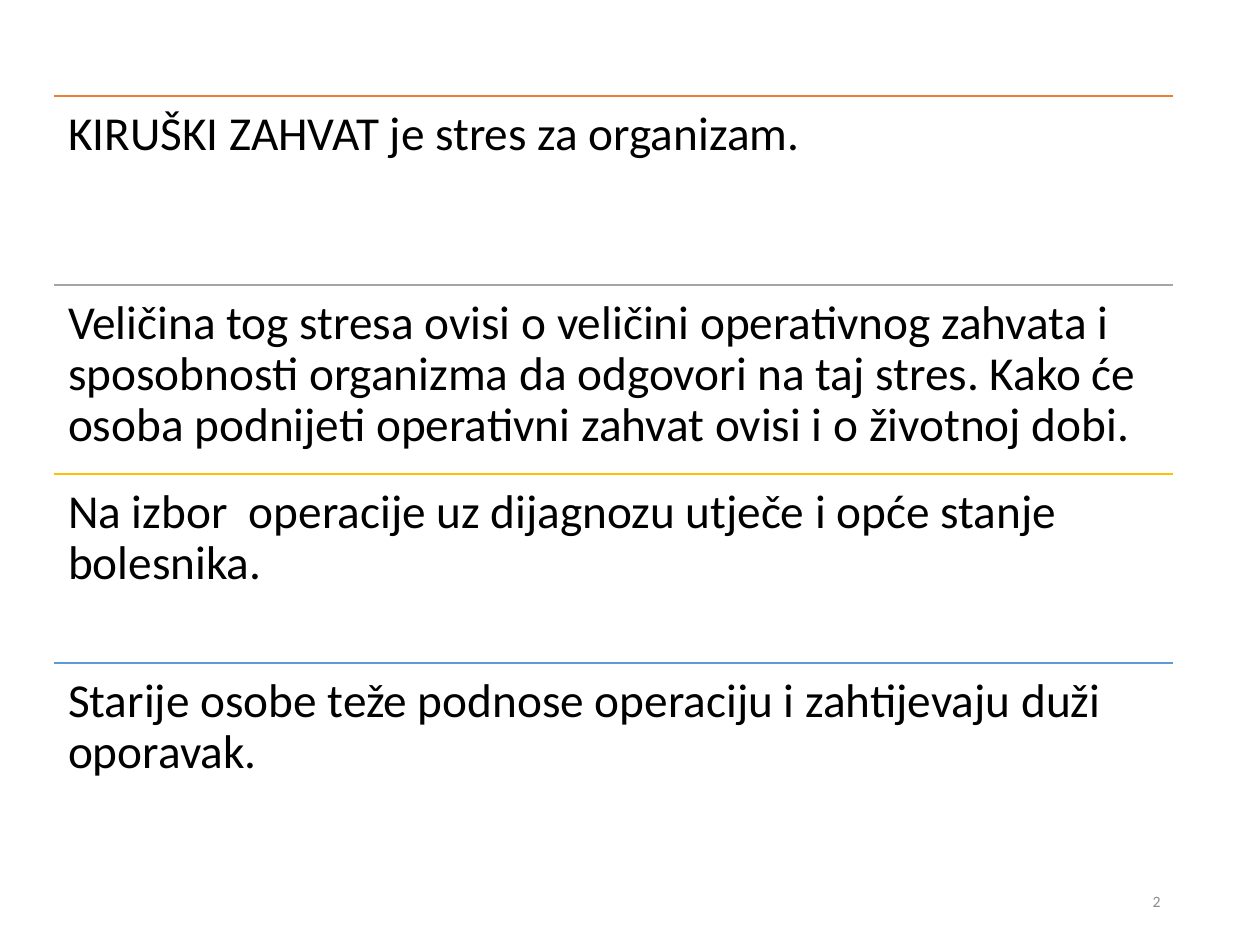
from lxml import etree
from pptx import Presentation
from pptx.dml.color import RGBColor
from pptx.enum.shapes import MSO_CONNECTOR
from pptx.enum.text import MSO_ANCHOR, PP_ALIGN
from pptx.oxml.ns import qn
from pptx.util import Inches, Pt

STRAIGHT = MSO_CONNECTOR.STRAIGHT
TOP, MIDDLE = MSO_ANCHOR.TOP, MSO_ANCHOR.MIDDLE
LEFT, RIGHT = PP_ALIGN.LEFT, PP_ALIGN.RIGHT


def color(value):
    return RGBColor.from_string(value)


def add_text(text, left, top, width, height, size, fill="000000", align=LEFT,
             anchor=TOP, inset=0.11, spacing=1.0, after=0):
    box = page.shapes.add_textbox(Inches(left), Inches(top), Inches(width), Inches(height))
    frame = box.text_frame
    frame.word_wrap = True
    frame.vertical_anchor = anchor
    frame.margin_left = frame.margin_right = Inches(inset)
    frame.margin_top = frame.margin_bottom = Inches(min(inset, height / 4))
    para = frame.paragraphs[0]
    para.alignment = align
    para.line_spacing = spacing
    para.space_after = Pt(after)
    span = para.add_run()
    span.text = text
    span.font.name = "Calibri"
    span.font.size = Pt(size)
    span.font.color.rgb = color(fill)


deck = Presentation()
deck.slide_width, deck.slide_height = Inches(10), Inches(7.5)
page = deck.slides.add_slide(deck.slide_layouts[6])

# Slide number
add_text("2", 7.06, 6.95, 2.25, 0.4, 9, fill="8C8C8C", align=RIGHT,
         anchor=MIDDLE, inset=0.1, after=6)

# Four equal rows, each a coloured rule with a statement under it
statements = [
    ("ED7D31", "KIRUŠKI ZAHVAT je stres za organizam."),
    ("A5A5A5", "Veličina tog stresa ovisi o veličini operativnog zahvata i "
               "sposobnosti organizma da odgovori na taj stres. Kako će osoba "
               "podnijeti operativni zahvat ovisi i o životnoj dobi."),
    ("FFC000", "Na izbor  operacije uz dijagnozu utječe i opće stanje bolesnika."),
    ("5B9BD5", "Starije osobe teže podnose operaciju i zahtijevaju duži oporavak."),
]
row_left, first_top, row_width, row_height = 0.43, 0.76, 8.88, 1.5

for index, (rule_color, statement) in enumerate(statements):
    top = first_top + index * row_height
    rule = page.shapes.add_connector(STRAIGHT, Inches(row_left), Inches(top),
                                     Inches(row_left + row_width), Inches(top))
    rule.line.color.rgb = color(rule_color)
    rule.line.width = Pt(1)
    etree.SubElement(rule._element.spPr, qn("a:effectLst"))
    add_text(statement, row_left, top, row_width, row_height, 27, spacing=0.9, after=9.45)

deck.save("out.pptx")
